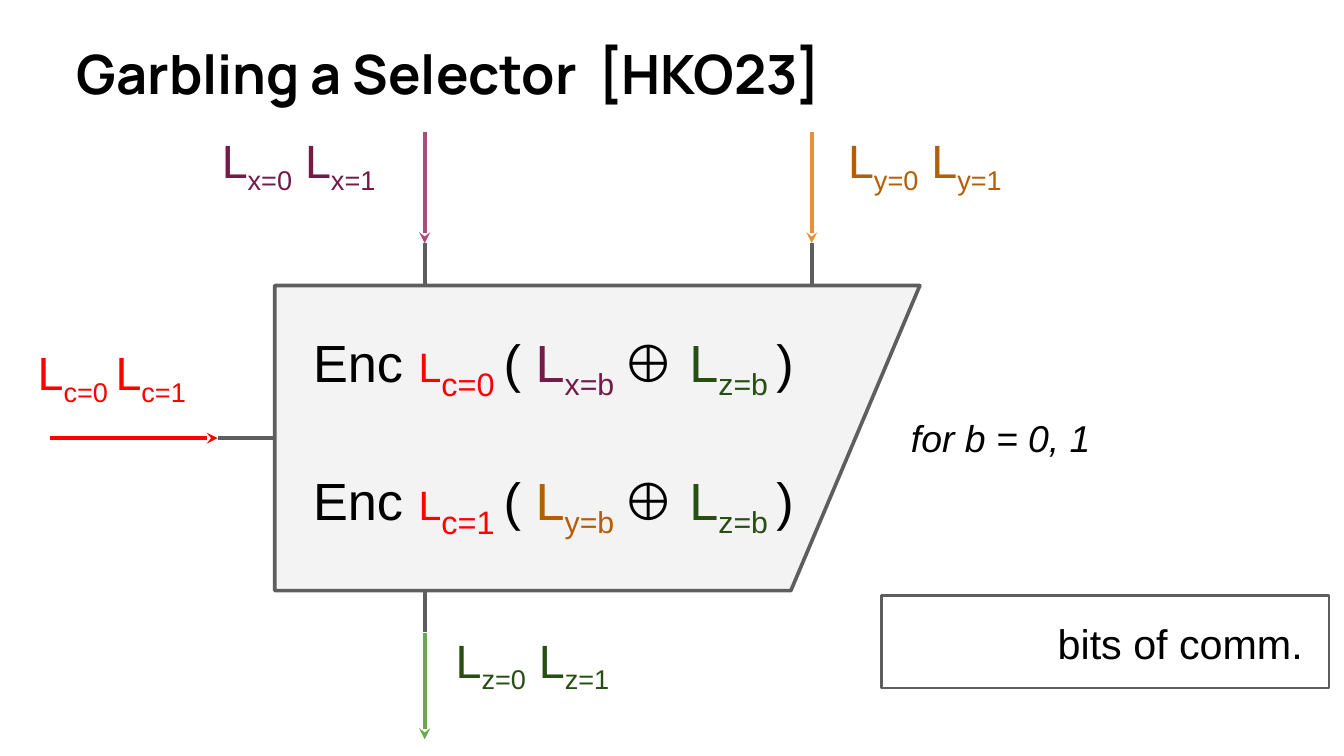
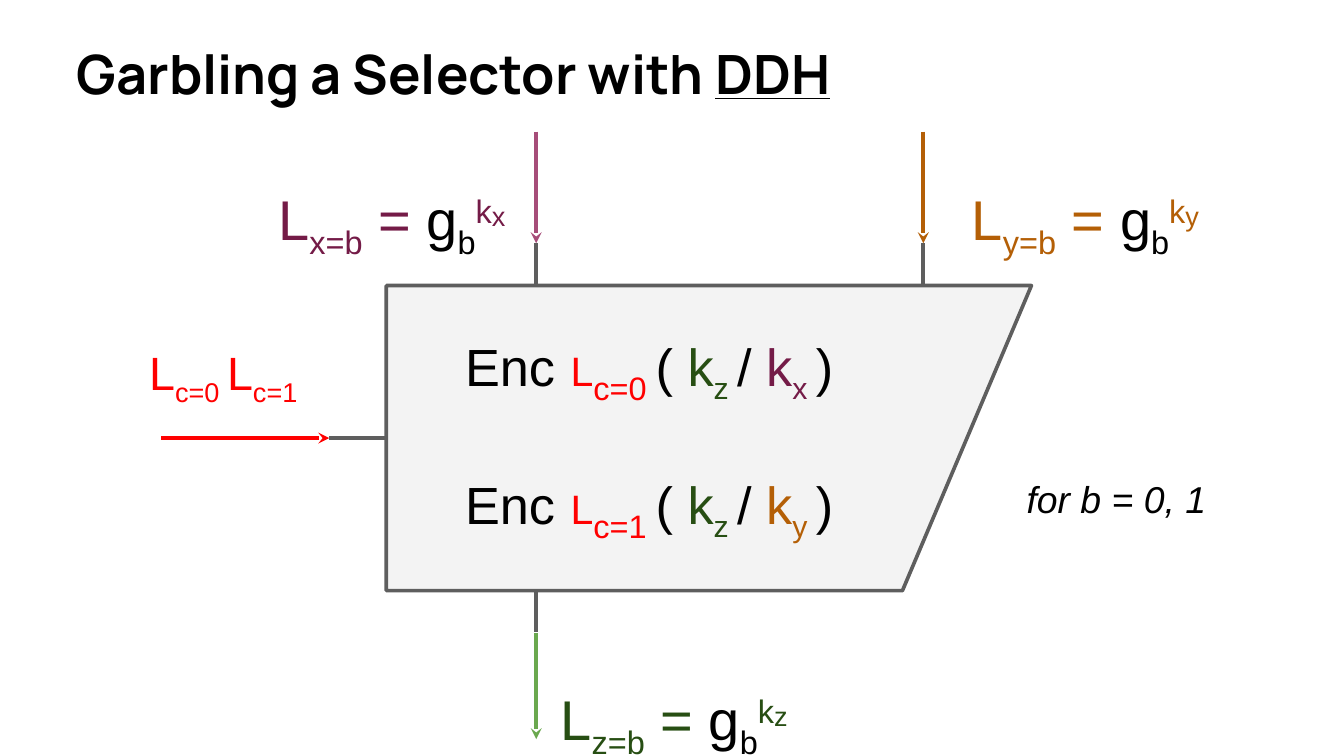
from dataclasses import dataclass
from typing import NamedTuple

from lxml import etree
from pptx import Presentation
from pptx import util as u
from pptx.dml.color import RGBColor
from pptx.enum import shapes, text
from pptx.oxml.ns import qn

# Square grid: 100 columns by 56.25 rows
WIDTH, HEIGHT = u.Inches(10), u.Inches(5.625)
CELL = WIDTH / 100
SHIFT = 8.3  # columns the second selector stands further right
COLORS = {
    "ink": "000000", "outline": "5E5E5E", "panel": "F3F3F3",
    "x": "741B47", "y": "B45F06", "z": "274E13", "c": "FF0000",
    "x wire": "A64D79", "y wire": "E69138", "z wire": "6AA84F",
}
SUB, SUPER = -25, 30


class Span(NamedTuple):
    words: str
    hue: str = "ink"
    size: float = 28
    base: int = 0
    font: str = "Arial"
    bold: bool = False
    italic: bool = False
    underline: bool = False


class Area(NamedTuple):
    col: float
    row: float
    cols: float
    rows: float


@dataclass
class Label:
    area: Area
    lines: list[list[Span]]
    inset: float = 0.9
    spacing: float = 1.0
    gap: float = 0  # points between lines


@dataclass
class Wire:
    start: tuple[float, float]
    end: tuple[float, float]
    hue: str = "outline"
    weight: float = 1.97
    arrow: bool = False


def cells(count: float) -> u.Emu:
    return u.Emu(round(count * CELL))


def color(name: str) -> RGBColor:
    return RGBColor.from_string(COLORS[name])


# Formula parts
def pair(wire: str, gap_in_index: bool = False) -> list[Span]:
    first, second = (f"{wire}=0 ", "L") if gap_in_index else (f"{wire}=0", " L")
    return [Span("L", wire, 25), Span(first, wire, 25, SUB),
            Span(second, wire, 25), Span(f"{wire}=1", wire, 25, SUB)]


def power(wire: str) -> list[Span]:
    return [Span("L", wire, 30), Span(f"{wire}=b", wire, 30, SUB),
            Span(" = ", wire, 30), Span("g", size=30), Span("b", size=30, base=SUB),
            Span("k", wire, 30, SUPER), Span(wire, wire, 25, SUPER)]


def encryption(bit: int, left: list[Span], sign: str, right: list[Span]) -> list[Span]:
    return [Span("Enc"), Span(" ", size=30), Span("L", "c", 22),
            Span(f"c={bit} ", "c", 30, SUB), Span("( "),
            *left, Span(sign), *right, Span(")")]


def indexed(letter: str, index: str, wire: str) -> list[Span]:
    return [Span(letter, wire), Span(f"{index} ", wire, base=SUB)]


# Drawing
def fill_text(box, label: Label) -> None:
    area = label.area
    box.left, box.top = cells(area.col), cells(area.row)
    box.width, box.height = cells(area.cols), cells(area.rows)
    frame = box.text_frame
    frame.word_wrap = True
    frame.auto_size = text.MSO_AUTO_SIZE.NONE
    frame.vertical_anchor = text.MSO_ANCHOR.TOP
    frame.margin_left = frame.margin_right = cells(label.inset)
    frame.margin_top = frame.margin_bottom = cells(label.inset)
    for number, spans in enumerate(label.lines):
        para = frame.add_paragraph() if number else frame.paragraphs[0]
        para.alignment = text.PP_ALIGN.LEFT
        para.line_spacing = label.spacing
        para.space_before = u.Pt(label.gap if number else 0)
        for part in spans:
            span = para.add_run()
            span.text = part.words
            span.font.name, span.font.size = part.font, u.Pt(part.size)
            span.font.bold, span.font.italic = part.bold, part.italic
            span.font.underline = part.underline
            span.font.color.rgb = color(part.hue)
            if part.base:
                span._r.get_or_add_rPr().set("baseline", str(part.base * 1000))


def add_label(page, label: Label) -> None:
    fill_text(page.shapes.add_textbox(0, 0, 0, 0), label)


def add_wire(page, wire: Wire) -> None:
    line = page.shapes.add_connector(
        shapes.MSO_CONNECTOR.STRAIGHT, *map(cells, wire.start + wire.end))
    line.line.color.rgb = color(wire.hue)
    line.line.width = u.Pt(wire.weight)
    if wire.arrow:
        etree.SubElement(line.line._get_or_add_ln(), qn("a:tailEnd"), type="stealth")
    etree.SubElement(line._element.spPr, qn("a:effectLst"))


def add_outlined(page, kind, area: Area, weight: float):
    shape = page.shapes.add_shape(kind, *map(cells, area))
    shape.shadow.inherit = False
    shape.line.color.rgb = color("outline")
    shape.line.width = u.Pt(weight)
    return shape


def add_selector(page, shift: float, y_hue: str) -> None:
    x, y, z = 31.6 + shift, 60.4 + shift, 31.6 + shift
    arrows = [Wire((col, 9.8), (col, 18.1), hue, arrow=True)
              for col, hue in ((y, y_hue), (x, "x wire"))]
    arrows.append(Wire((z, 47.1), (z, 55), "z wire", arrow=True))
    for arrow in arrows:
        add_wire(page, arrow)

    # Slanted body: a manual-input shape turned on its side
    body = add_outlined(page, shapes.MSO_SHAPE.FLOWCHART_MANUAL_INPUT,
                        Area(33.1 + shift, 8.6, 22.7, 48), 1.97)
    body.rotation = 90
    body._element.spPr.find(qn("a:xfrm")).set("flipH", "1")
    body.fill.solid()
    body.fill.fore_color.rgb = color("panel")

    # Stubs and the control input
    for stub in (Wire((x, 18.1), (x, 21.1)), Wire((y, 18.1), (y, 21.1)),
                 Wire((z, 44), (z, 47)),
                 Wire((3.7 + shift, 32.6), (16.2 + shift, 32.6), "c", arrow=True),
                 Wire((20.5 + shift, 32.6), (16.2 + shift, 32.6), weight=2.25)):
        add_wire(page, stub)
    add_label(page, Label(Area(1.9 + shift, 24.7, 24, 11.6), [pair("c", True)]))


def add_page(deck, title: list[str], shift: float, y_hue: str):
    page = deck.slides.add_slide(deck.slide_layouts[5])
    spans = [Span(words, size=29, font="Manrope", bold=True, underline=number > 0)
             for number, words in enumerate(title)]
    fill_text(page.shapes.title, Label(Area(4.7, 1.3, 61.6, 6.9), [spans], 1, 1.15))
    add_selector(page, shift, y_hue)
    return page


def add_note(page, col: float, row: float) -> None:
    note = [Span("for b = 0, 1", size=20, italic=True)]
    add_label(page, Label(Area(col, row, 15.7, 5.4), [note], 1))


def build_hash_page(deck) -> None:
    page = add_page(deck, ["Garbling a Selector  [HKO23]"], 0, "y wire")
    for wire, area in (("x", Area(15.6, 8.9, 20.2, 8.6)),
                       ("y", Area(62.2, 8.9, 25, 11.6)),
                       ("z", Area(33, 46.1, 25, 11.6))):
        add_label(page, Label(area, [pair(wire)]))
    rows = [encryption(bit, indexed("L", f"{wire}=b", wire), "⊕",
                       [Span(" ", "z"), *indexed("L", "z=b", "z")])
            for bit, wire in enumerate("xy")]
    add_label(page, Label(Area(22.4, 23.4, 41, 18.4), rows, gap=33))
    add_note(page, 66.8, 29.9)

    # Cost box
    cost = [Span("bits of comm.", size=22.1)]
    add_label(page, Label(Area(77.5, 44.8, 22.5, 6), [cost], 1.2))
    add_outlined(page, shapes.MSO_SHAPE.RECTANGLE,
                 Area(65.6, 44.3, 33.3, 6.9), 1.5).fill.background()


def build_ddh_page(deck) -> None:
    page = add_page(deck, ["Garbling a Selector with ", "DDH"], SHIFT, "y")
    for wire, area in (("x", Area(19.8, 10, 28.7, 9.7)),
                       ("y", Area(71.4, 10, 25.5, 9.7)),
                       ("z", Area(40.8, 47.2, 20.2, 8.3))):
        add_label(page, Label(area, [power(wire)], spacing=1.5))
    rows = [encryption(bit, indexed("k", "z", "z"), "/ ", indexed("k", wire, wire))
            for bit, wire in enumerate("xy")]
    add_label(page, Label(Area(33.7, 23.7, 32.5, 18.4), rows, gap=33))
    add_note(page, 75.4, 34.4)


def main() -> None:
    deck = Presentation()
    deck.slide_width, deck.slide_height = WIDTH, HEIGHT
    build_hash_page(deck)
    build_ddh_page(deck)
    deck.save("out.pptx")


if __name__ == "__main__":
    main()
